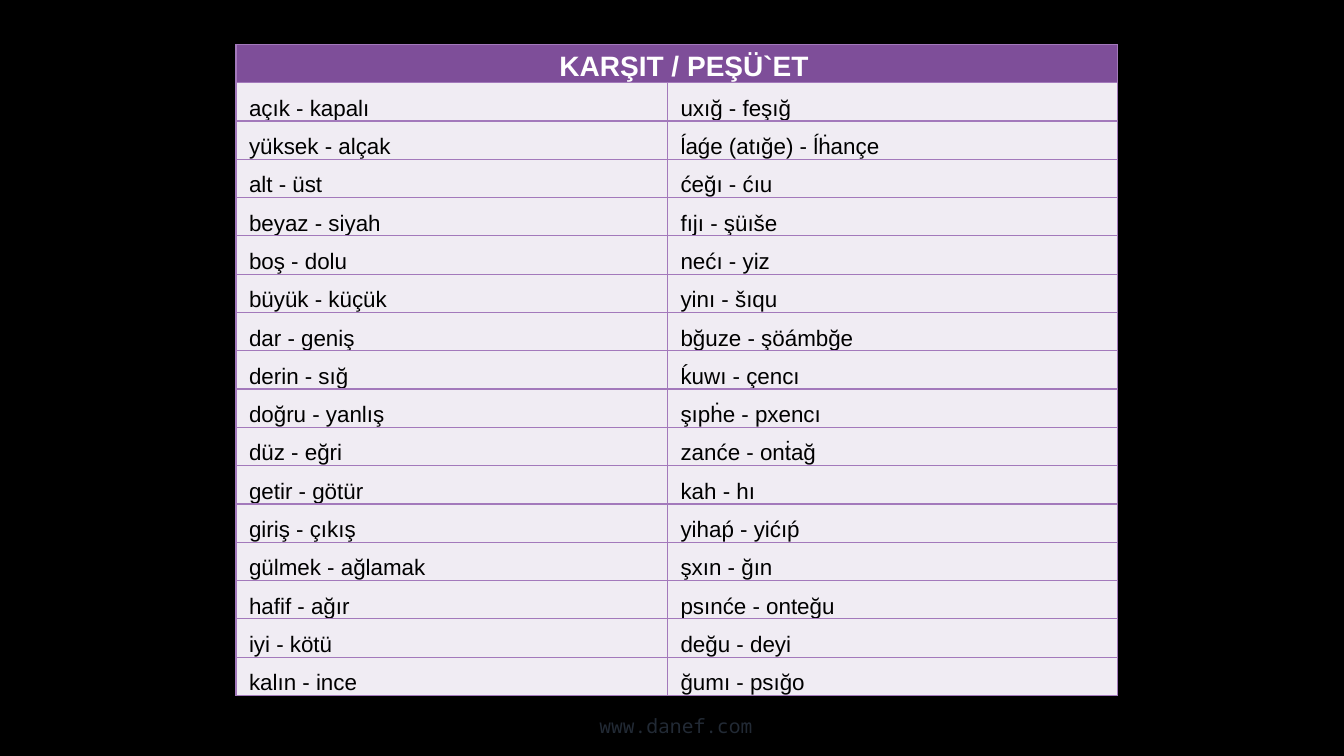
"""Builds a two-language slide of opposite word pairs."""
from dataclasses import dataclass

from lxml import etree
from pptx import Presentation
from pptx import util as u
from pptx.dml import color
from pptx.enum import text
from pptx.oxml import ns


@dataclass(frozen=True)
class Theme:
    background: str = "000000"
    header_fill: str = "7E4E99"
    row_fill: str = "F0ECF3"
    border: str = "A379BB"
    header_text: str = "FFFFFF"
    row_text: str = "000000"
    address_text: str = "222A35"
    font: str = "Arial"
    mono: str = "Noto Sans Mono"
    header_size: int = 20
    row_size: int = 16
    address_size: int = 14
    border_width: int = 1


HEADING = "KARŞIT / PEŞÜ`ET"
OPPOSITES = [
    ("açık - kapalı", "uxığ - feşığ"),
    ("yüksek - alçak", "ĺaǵe (atığe) - ĺḣançe"),
    ("alt - üst", "ćeğı - ćıu"),
    ("beyaz - siyah", "fıjı - şüıše"),
    ("boş - dolu", "nećı - yiz"),
    ("büyük - küçük", "yinı - šıqu"),
    ("dar - geniş", "bğuze - şöámbğe"),
    ("derin - sığ", "ḱuwı - çencı"),
    ("doğru - yanlış", "şıpḣe - pxencı"),
    ("düz - eğri", "zanće - onṫağ"),
    ("getir - götür", "kah - hı"),
    ("giriş - çıkış", "yihaṕ - yićıṕ"),
    ("gülmek - ağlamak", "şxın - ğın"),
    ("hafif - ağır", "psınće - onteğu"),
    ("iyi - kötü", "değu - deyi"),
    ("kalın - ince", "ğumı - psığo"),
]


class SlideBuilder:
    def __init__(self, slide, theme):
        self.slide, self.theme = slide, theme
        fill = slide.background.fill
        fill.solid()
        fill.fore_color.rgb = color.RGBColor.from_string(theme.background)

    def style(self, paragraph, wording, font, size, tint, bold=False, align=text.PP_ALIGN.LEFT):
        paragraph.text = wording
        paragraph.alignment = align
        paragraph.font.name = font
        paragraph.font.size = u.Pt(size)
        paragraph.font.bold = bold
        paragraph.font.color.rgb = color.RGBColor.from_string(tint)

    def border(self, cell):
        properties = cell._tc.get_or_add_tcPr()
        for side in ("lnL", "lnR", "lnT", "lnB"):
            line = etree.SubElement(properties, ns.qn(f"a:{side}"), w=str(u.Pt(self.theme.border_width)))
            solid = etree.SubElement(line, ns.qn("a:solidFill"))
            etree.SubElement(solid, ns.qn("a:srgbClr"), val=self.theme.border)

    def cell(self, cell, fill, indent):
        self.border(cell)
        cell.fill.solid()
        cell.fill.fore_color.rgb = color.RGBColor.from_string(fill)
        cell.vertical_anchor = text.MSO_ANCHOR.BOTTOM
        cell.margin_left = u.Inches(indent)
        cell.margin_right = cell.margin_top = u.Inches(0.01)
        cell.margin_bottom = 0

    def word_table(self, heading, pairs, left, top, widths, height):
        theme = self.theme
        table = self.slide.shapes.add_table(
            len(pairs) + 1, len(widths), u.Inches(left), u.Inches(top),
            u.Inches(sum(widths)), u.Inches(height)).table
        table.horz_banding = False
        for column, width in zip(table.columns, widths):
            column.width = u.Inches(width)
        for header in table.rows[0].cells:
            self.cell(header, theme.header_fill, 0.16)
        title = table.cell(0, 0)
        title.merge(table.cell(0, len(widths) - 1))
        self.style(title.text_frame.paragraphs[0], heading, theme.font, theme.header_size,
                   theme.header_text, bold=True, align=text.PP_ALIGN.CENTER)
        for row, pair in enumerate(pairs, start=1):
            for column, words in enumerate(pair):
                entry = table.cell(row, column)
                self.cell(entry, theme.row_fill, 0.13)
                self.style(entry.text_frame.paragraphs[0], words, theme.font,
                           theme.row_size, theme.row_text)

    def address(self, wording, left, top, width, height):
        frame = self.slide.shapes.add_textbox(
            u.Inches(left), u.Inches(top), u.Inches(width), u.Inches(height)).text_frame
        frame.word_wrap = True
        frame.vertical_anchor = text.MSO_ANCHOR.MIDDLE
        line = frame.paragraphs[0]
        self.style(line, wording, self.theme.mono, self.theme.address_size,
                   self.theme.address_text, align=text.PP_ALIGN.CENTER)
        line.line_spacing = 0.7


def main():
    deck = Presentation()
    deck.slide_width, deck.slide_height = u.Inches(13.33), u.Inches(7.5)
    builder = SlideBuilder(deck.slides.add_slide(deck.slide_layouts[6]), Theme())
    builder.address("www.danef.com", 3.16, 6.91, 7.09, 0.63)
    builder.word_table(HEADING, OPPOSITES, 2.34, 0.44, (4.28, 4.46), 6.46)
    deck.save("out.pptx")


if __name__ == "__main__":
    main()
